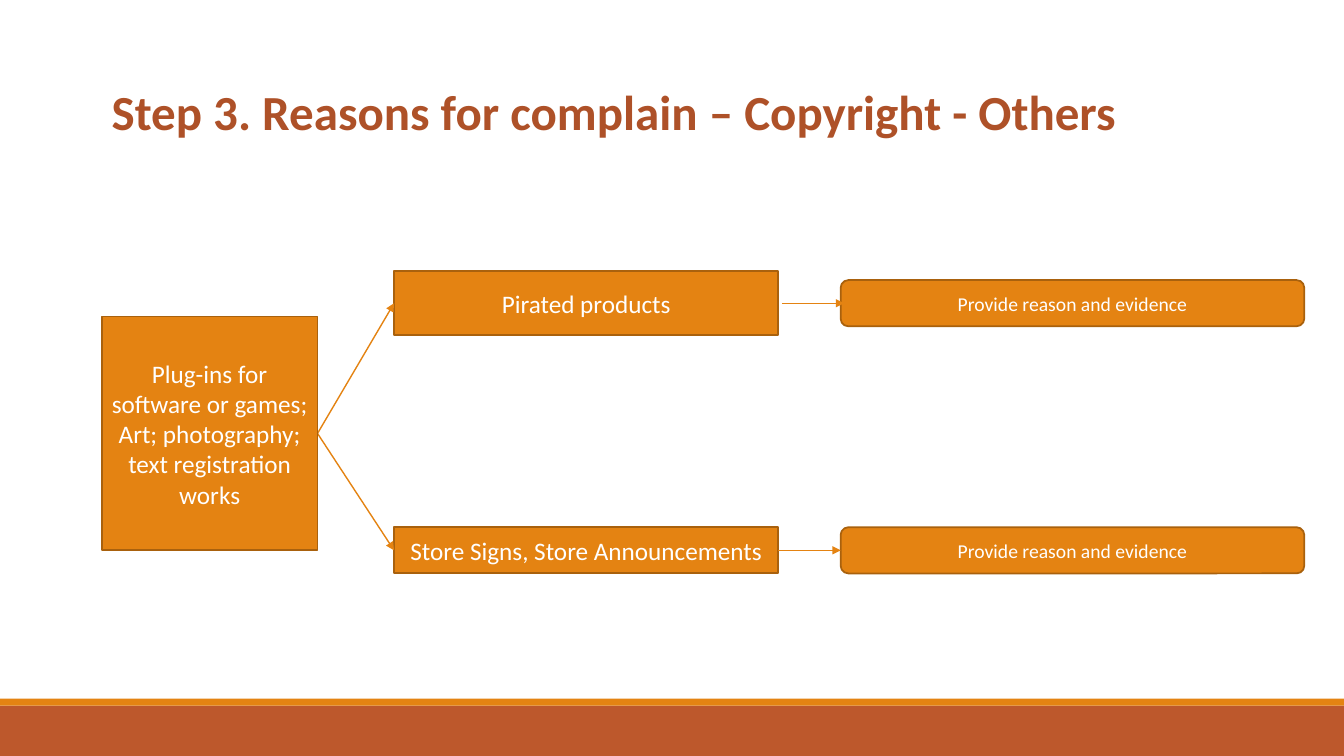
from lxml import etree
from pptx import Presentation
from pptx import util as u
from pptx.dml.color import RGBColor
from pptx.enum import shapes, text
from pptx.oxml import ns

COLORS = {
    "orange": "E48312",
    "outline": "A9610D",
    "rust": "BD582C",
    "title": "AE5128",
    "white": "FFFFFF",
}
RECTANGLE = shapes.MSO_SHAPE.RECTANGLE
ROUNDED = shapes.MSO_SHAPE.ROUNDED_RECTANGLE


class FlowSlide:
    font = "Calibri"
    inset = 6

    def __init__(self, slide):
        self.slide = slide

    def color(self, name):
        return RGBColor.from_string(COLORS[name])

    def label(self, shape, wording, size, color, bold=False):
        frame = shape.text_frame
        frame.text = wording
        for paragraph in frame.paragraphs:
            for run in paragraph.runs:
                run.font.name = self.font
                run.font.size = u.Pt(size)
                run.font.bold = bold
                run.font.color.rgb = self.color(color)
        return frame

    def block(self, kind, left, top, width, height, fill):
        shape = self.slide.shapes.add_shape(
            kind, u.Pt(left), u.Pt(top), u.Pt(width), u.Pt(height))
        shape.shadow.inherit = False
        shape.fill.solid()
        shape.fill.fore_color.rgb = self.color(fill)
        shape.line.fill.background()
        return shape

    def box(self, kind, left, middle, width, height, wording, size):
        shape = self.block(kind, left, middle - height / 2, width, height, "orange")
        shape.line.color.rgb = self.color("outline")
        shape.line.width = u.Pt(1.25)
        frame = self.label(shape, wording, size, "white")
        frame.word_wrap = True
        frame.margin_left = frame.margin_right = u.Pt(self.inset)
        frame.vertical_anchor = text.MSO_ANCHOR.MIDDLE
        frame.paragraphs[0].alignment = text.PP_ALIGN.CENTER

    def arrow(self, start, end):
        connector = self.slide.shapes.add_connector(
            shapes.MSO_CONNECTOR.STRAIGHT, *(u.Pt(value) for value in start + end))
        connector.line.color.rgb = self.color("orange")
        connector.line.width = u.Pt(1)
        properties = connector._element.spPr
        etree.SubElement(properties.find(ns.qn("a:ln")), ns.qn("a:tailEnd"), type="triangle")
        etree.SubElement(properties, ns.qn("a:effectLst"))

    def title(self, left, top, width, height, wording):
        shape = self.slide.shapes.add_textbox(
            u.Pt(left), u.Pt(top), u.Pt(width), u.Pt(height))
        frame = self.label(shape, wording, 35, "title", bold=True)
        frame.word_wrap = False
        frame.auto_size = text.MSO_AUTO_SIZE.SHAPE_TO_FIT_TEXT


def main():
    presentation = Presentation()
    presentation.slide_width = u.Pt(960)
    presentation.slide_height = u.Pt(540)
    slide = presentation.slides.add_slide(presentation.slide_layouts[6])
    flow = FlowSlide(slide)

    flow.block(RECTANGLE, 0, 504, 960, 36, "rust")
    flow.block(RECTANGLE, 0, 499, 960, 5, "orange")

    source_left, source_middle, source_width = 72.7, 309.6, 154.1
    source_right = source_left + source_width
    topic_left, topic_width = 281.5, 274.5
    evidence_left = 600.5
    branches = [
        ("Pirated products", 216.6, 45.6, 2.5),
        ("Store Signs, Store Announcements", 393.1, 33, 0),
    ]
    for topic, middle, height, shift in branches:
        flow.box(RECTANGLE, topic_left, middle, topic_width, height, topic, 18)
        flow.box(ROUNDED, evidence_left, middle, 331.2, 33, "Provide reason and evidence", 14)
        flow.arrow((source_right, source_middle), (topic_left, middle))
        flow.arrow((topic_left + topic_width + shift, middle), (evidence_left + shift, middle))

    flow.box(RECTANGLE, source_left, source_middle, source_width, 167,
             "Plug-ins for software or games; Art; photography; text registration works", 18)
    flow.title(72.7, 54.7, 738.7, 49.7, "Step 3. Reasons for complain – Copyright - Others")

    presentation.save("out.pptx")


if __name__ == "__main__":
    main()
